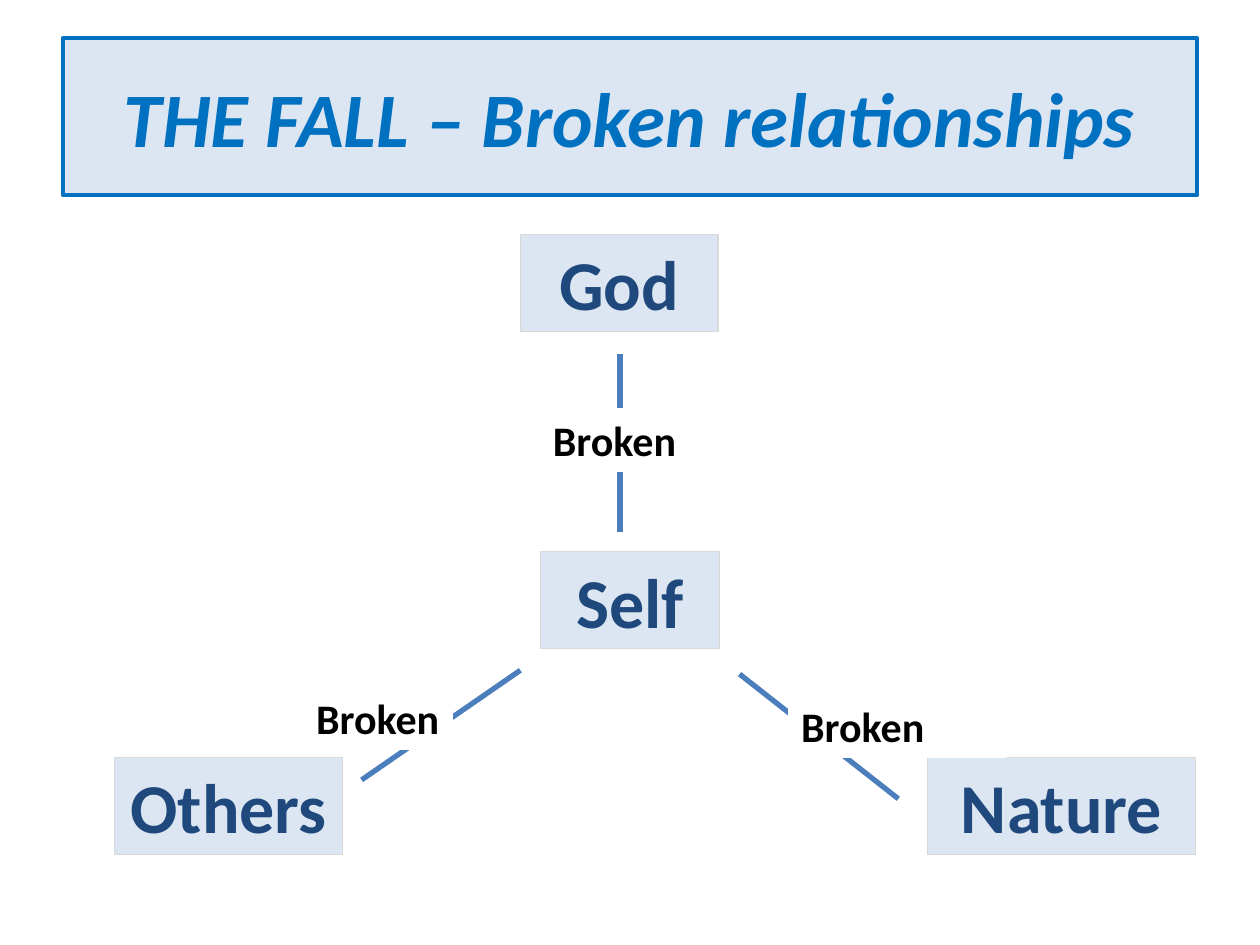
from dataclasses import dataclass

from lxml import etree
from pptx import Presentation
from pptx.dml.color import RGBColor
from pptx.enum import shapes, text
from pptx.oxml.ns import qn
from pptx.util import Inches, Pt


@dataclass(frozen=True)
class Theme:
    """Colours, font and sizes used on the page."""
    font: str = "Calibri"
    panel: str = "DCE6F2"
    panel_edge: str = "D9D9D9"
    accent: str = "0070C0"
    navy: str = "1F497D"
    link: str = "4B7EBC"
    white: str = "FFFFFF"
    black: str = "000000"
    title_size: int = 44
    party_size: int = 40
    label_size: int = 24
    title_edge: float = 2.25
    thin_edge: float = 0.75
    link_width: int = 3


THEME = Theme()
CENTER = text.PP_ALIGN.CENTER
LEFT = text.PP_ALIGN.LEFT

PARTIES = {
    "God": (4.13, 1.86, 1.57, 0.77),
    "Self": (4.29, 4.38, 1.42, 0.77),
    "Others": (0.91, 6.01, 1.81, 0.77),
    "Nature": (7.36, 6.01, 2.13, 0.77),
}
LINKS = [
    (4.92, 2.81, 4.92, 4.22),
    (5.87, 5.35, 7.13, 6.34),
    (4.13, 5.32, 2.87, 6.19),
]
LABELS = [
    (4.29, 3.24, 1.73, 0.5),
    (6.26, 5.51, 1.73, 0.5),
    (2.41, 5.45, 1.18, 0.5),
]


def inches(values):
    """Turn a sequence of numbers into lengths."""
    return [Inches(value) for value in values]


def paint(shape, fill, edge, width):
    """Give a shape its fill and outline."""
    shape.fill.solid()
    shape.fill.fore_color.rgb = RGBColor.from_string(fill)
    shape.line.color.rgb = RGBColor.from_string(edge)
    shape.line.width = Pt(width)


def write(shape, words, size, color, align, anchor, italic=False):
    """Set one bold paragraph in a shape."""
    frame = shape.text_frame
    frame.word_wrap = True
    frame.vertical_anchor = anchor
    para = frame.paragraphs[0]
    para.text = words
    para.alignment = align
    font = para.font
    font.name = THEME.font
    font.size = Pt(size)
    font.bold = True
    font.italic = italic
    font.color.rgb = RGBColor.from_string(color)


def add_title(page, box, words):
    """Place the framed title."""
    title = page.shapes.title
    title.left, title.top, title.width, title.height = inches(box)
    paint(title, THEME.panel, THEME.accent, THEME.title_edge)
    write(title, words, THEME.title_size, THEME.accent, CENTER,
          text.MSO_ANCHOR.MIDDLE, italic=True)


def add_box(page, box, words, size, color, fill, edge, align):
    """Place a filled rectangle with a word in it."""
    shape = page.shapes.add_shape(shapes.MSO_SHAPE.RECTANGLE, *inches(box))
    shape.shadow.inherit = False
    paint(shape, fill, edge, THEME.thin_edge)
    write(shape, words, size, color, align, text.MSO_ANCHOR.TOP)
    shape.text_frame.auto_size = text.MSO_AUTO_SIZE.SHAPE_TO_FIT_TEXT


def add_party(page, box, name):
    """Place one party to the relationships."""
    add_box(page, box, name, THEME.party_size, THEME.navy,
            THEME.panel, THEME.panel_edge, CENTER)


def add_label(page, box, words):
    """Place a label that interrupts a link."""
    add_box(page, box, words, THEME.label_size, THEME.black,
            THEME.white, THEME.white, LEFT)


def add_link(page, ends):
    """Draw one straight link between two parties."""
    link = page.shapes.add_connector(
        shapes.MSO_CONNECTOR.STRAIGHT, *inches(ends))
    link.line.color.rgb = RGBColor.from_string(THEME.link)
    link.line.width = Pt(THEME.link_width)
    etree.SubElement(link._element.spPr, qn("a:effectLst"))


def main():
    """Build the page and save the deck."""
    deck = Presentation()
    deck.slide_width, deck.slide_height = inches((10, 7.5))
    page = deck.slides.add_slide(deck.slide_layouts.get_by_name("Title Only"))
    add_title(page, (0.5, 0.3, 9, 1.25), "THE FALL – Broken relationships")
    for name, box in PARTIES.items():
        add_party(page, box, name)
    for ends in LINKS:
        add_link(page, ends)
    for box in LABELS:
        add_label(page, box, "Broken")
    deck.save("out.pptx")


if __name__ == "__main__":
    main()
